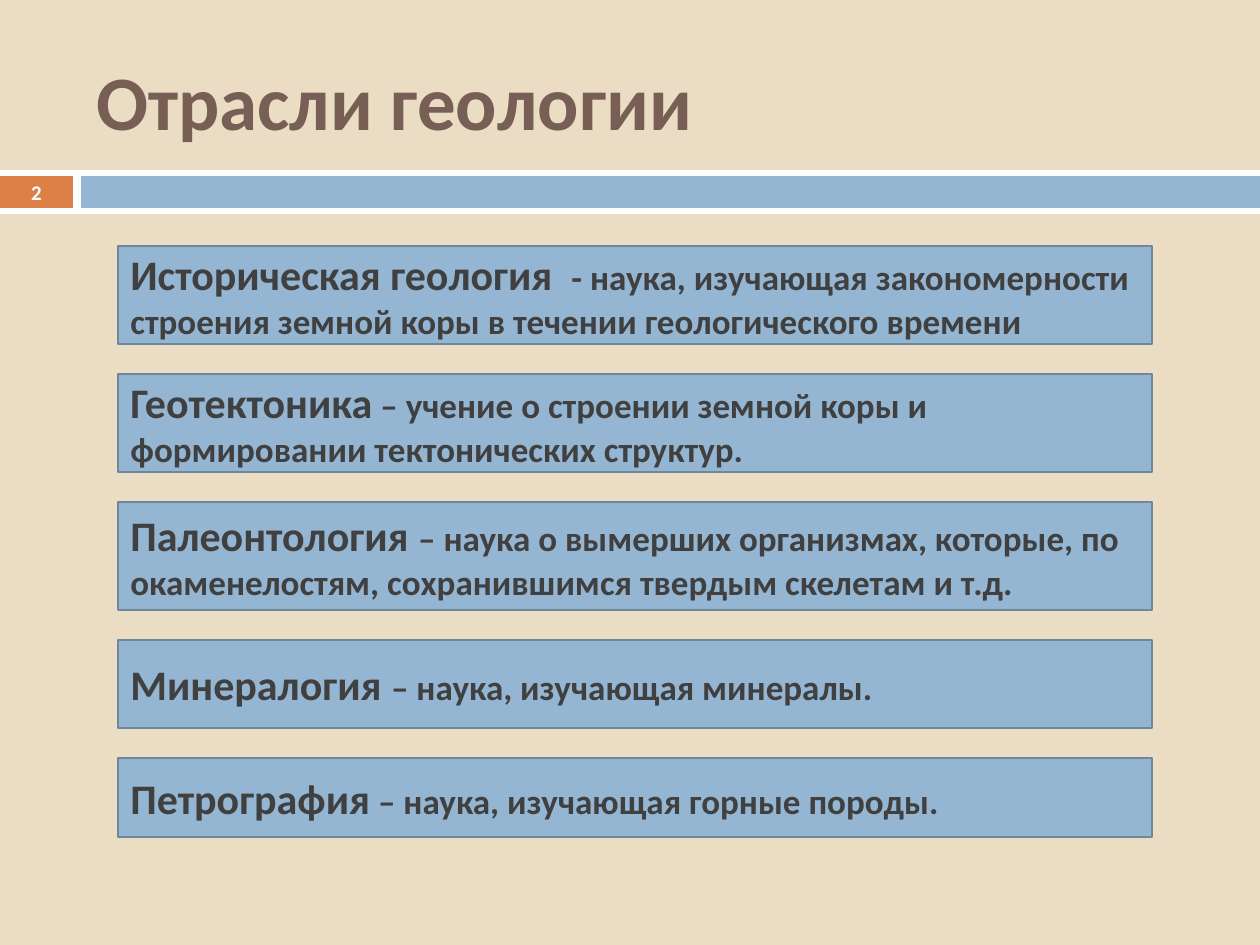
"""Build the slide on the branches of geology."""
from dataclasses import dataclass

from pptx import Presentation
from pptx.dml.color import RGBColor
from pptx.enum.shapes import MSO_SHAPE as Shape
from pptx.enum.text import MSO_ANCHOR as Anchor, PP_ALIGN as Align
from pptx.util import Emu, Pt

EMU_PER_PX = 914400 / 126
PAGE_WIDTH, PAGE_HEIGHT = 1260, 945
TITLE_ONLY = 5


@dataclass(frozen=True)
class Theme:
    font: str = "Calibri"
    background: str = "EBDDC3"
    white: str = "FFFFFF"
    orange: str = "DD8047"
    blue: str = "94B6D2"
    outline: str = "6D879B"
    title: str = "775F55"
    body: str = "404040"
    title_size: float = 44
    term_size: float = 24
    text_size: float = 20
    number_size: float = 11.9
    outline_width: float = 1.5


def px(length):
    return Emu(round(length * EMU_PER_PX))


class SlideBuilder:
    def __init__(self, deck, theme):
        self.theme = theme
        self.page = deck.slides.add_slide(deck.slide_layouts[TITLE_ONLY])
        self.paint(self.page.background.fill, theme.background)

    def paint(self, fill, color):
        fill.solid()
        fill.fore_color.rgb = RGBColor.from_string(color)

    def add_spans(self, box, spans, color, align=Align.LEFT):
        frame = box.text_frame
        frame.word_wrap = True
        frame.vertical_anchor = Anchor.MIDDLE
        para = frame.paragraphs[0]
        para.alignment = align
        for text, size in spans:
            span = para.add_run()
            span.text = text
            span.font.name = self.theme.font
            span.font.size = Pt(size)
            span.font.bold = True
            span.font.color.rgb = RGBColor.from_string(color)

    def title(self, text, left, top, width, height):
        box = self.page.shapes.title
        box.left, box.top, box.width, box.height = map(px, (left, top, width, height))
        self.add_spans(box, [(text, self.theme.title_size)], self.theme.title)

    def bar(self, color, left, top, width, height):
        box = self.page.shapes.add_shape(
            Shape.RECTANGLE, *map(px, (left, top, width, height)))
        box.shadow.inherit = False
        self.paint(box.fill, color)
        box.line.fill.background()
        return box

    def branch(self, term, meaning, left, top, width, height):
        theme = self.theme
        box = self.bar(theme.blue, left, top, width, height)
        self.paint(box.line.fill, theme.outline)
        box.line.width = Pt(theme.outline_width)
        spans = [(term, theme.term_size), (meaning, theme.text_size)]
        self.add_spans(box, spans, theme.body)

    def number(self, text, left, top, width, height):
        box = self.page.shapes.add_textbox(*map(px, (left, top, width, height)))
        spans = [(text, self.theme.number_size)]
        self.add_spans(box, spans, self.theme.white, Align.CENTER)


BRANCHES = [
    ("Историческая геология  ",
     "- наука, изучающая закономерности строения земной коры "
     "в течении геологического времени", 98),
    ("Геотектоника",
     " – учение о строении земной коры и формировании тектонических структур.", 98),
    ("Палеонтология ",
     "– наука о вымерших организмах, которые, по окаменелостям, "
     "сохранившимся твердым скелетам и т.д.", 108),
    ("Минералогия ", "– наука, изучающая минералы.", 88),
    ("Петрография", " – наука, изучающая горные породы.", 79),
]
BRANCH_LEFT, BRANCH_TOP, BRANCH_WIDTH, BRANCH_GAP = 118, 246, 1034, 30


def main():
    deck = Presentation()
    deck.slide_width, deck.slide_height = px(PAGE_WIDTH), px(PAGE_HEIGHT)
    theme = Theme()
    slide = SlideBuilder(deck, theme)

    slide.bar(theme.white, 0, 170, PAGE_WIDTH, 44)
    slide.bar(theme.orange, 0, 176, 73, 32)
    slide.bar(theme.blue, 81, 176, PAGE_WIDTH - 81, 32)
    slide.title("Отрасли геологии", 84, 32, 1124, 136)

    top = BRANCH_TOP
    for term, meaning, height in BRANCHES:
        slide.branch(term, meaning, BRANCH_LEFT, top, BRANCH_WIDTH, height)
        top += height + BRANCH_GAP

    slide.number("2", 0, 175, 73, 34)
    deck.save("out.pptx")


if __name__ == "__main__":
    main()
